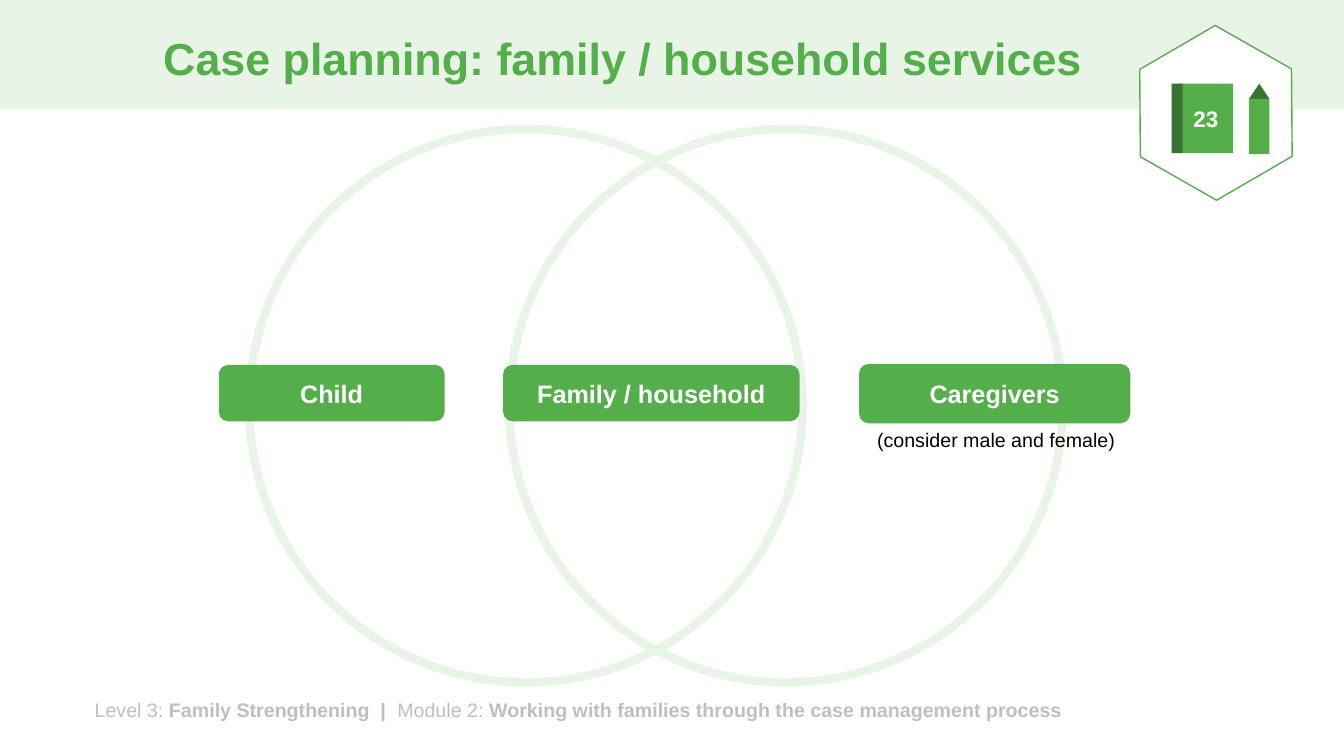
from pptx import Presentation
from pptx.dml.color import RGBColor
from pptx.enum.shapes import MSO_SHAPE as Shape
from pptx.enum.text import MSO_ANCHOR as Anchor, MSO_AUTO_SIZE as AutoSize, PP_ALIGN as Align
from pptx.util import Inches, Pt


def color(value):
    return RGBColor.from_string(value)


class SlideBuilder:
    FONT = "Arial"
    GREEN = "54AF4B"
    DARK = "387532"
    PALE = "E8F4E6"
    GRAY = "BFBFBF"
    WHITE = "FFFFFF"
    BLACK = "000000"

    def __init__(self, deck):
        self.page = deck.slides.add_slide(deck.slide_layouts[6])

    def shape(self, kind, left, top, width, height, fill=None, line=None, weight=1):
        item = self.page.shapes.add_shape(
            kind, Inches(left), Inches(top), Inches(width), Inches(height))
        item.shadow.inherit = False
        if fill:
            item.fill.solid()
            item.fill.fore_color.rgb = color(fill)
        else:
            item.fill.background()
        if line:
            item.line.color.rgb = color(line)
            item.line.width = Pt(weight)
        else:
            item.line.fill.background()
        return item

    def set_text(self, item, spans, size, ink, align=Align.LEFT, anchor=Anchor.MIDDLE, wrap=True):
        frame = item.text_frame
        frame.word_wrap = wrap
        frame.vertical_anchor = anchor
        para = frame.paragraphs[0]
        para.alignment = align
        para.font.name = self.FONT
        para.font.size = Pt(size)
        para.font.color.rgb = color(ink)
        for text, bold in spans:
            span = para.add_run()
            span.text = text
            span.font.bold = bold
        return para

    def text(self, left, top, width, height, spans, size, ink,
             align=Align.LEFT, anchor=Anchor.TOP, grow=True):
        box = self.page.shapes.add_textbox(
            Inches(left), Inches(top), Inches(width), Inches(height))
        if grow:
            box.text_frame.auto_size = AutoSize.SHAPE_TO_FIT_TEXT
        return self.set_text(box, spans, size, ink, align, anchor)

    def label(self, left, top, width, height, caption):
        pill = self.shape(Shape.ROUNDED_RECTANGLE, left, top, width, height, self.GREEN)
        self.set_text(pill, [(caption, True)], 18, self.WHITE, Align.CENTER)

    def badge(self, number):
        hexagon = self.shape(Shape.HEXAGON, 11.19, 0.37, 1.74, 1.5, self.WHITE, self.GREEN)
        hexagon.adjustments[0] = 0.29
        hexagon.rotation = 29.7
        book = self.shape(Shape.RECTANGLE, 11.69, 0.83, 0.54, 0.69, self.GREEN)
        self.set_text(book, [(number, True)], 16, self.WHITE, Align.CENTER, wrap=False)
        self.shape(Shape.RECTANGLE, 11.62, 0.83, 0.11, 0.69, self.DARK)
        self.shape(Shape.ISOSCELES_TRIANGLE, 12.39, 0.83, 0.2, 0.15, self.DARK)
        self.shape(Shape.RECTANGLE, 12.39, 0.98, 0.2, 0.55, self.GREEN)


def main():
    deck = Presentation()
    deck.slide_width = Inches(13.33)
    deck.slide_height = Inches(7.5)
    slide = SlideBuilder(deck)

    slide.shape(Shape.RECTANGLE, 0, 0, 13.33, 1.08, slide.PALE)
    slide.text(0.84, 6.87, 10.62, 0.34, [
        ("Level 3: ", False),
        ("Family Strengthening  |  ", True),
        ("Module 2: ", False),
        ("Working with families through the case management process", True),
    ], 14, slide.GRAY)
    title = slide.text(1.52, 0.13, 10.9, 0.95,
                       [("Case planning: family / household services", True)],
                       32, slide.GREEN, anchor=Anchor.MIDDLE, grow=False)
    title.line_spacing = 0.9
    slide.badge("23")

    for left in (2.47, 5.05):
        slide.shape(Shape.OVAL, left, 1.28, 5.49, 5.49, line=slide.PALE, weight=6)

    for left, top, width, height, caption in (
        (2.17, 3.62, 2.24, 0.56, "Child"),
        (4.99, 3.62, 2.94, 0.56, "Family / household"),
        (8.52, 3.61, 2.69, 0.59, "Caregivers"),
    ):
        slide.label(left, top, width, height, caption)
    slide.text(8.52, 4.2, 2.72, 0.34, [("(consider male and female)", False)],
               14, slide.BLACK, Align.CENTER)

    deck.save("out.pptx")


if __name__ == "__main__":
    main()
